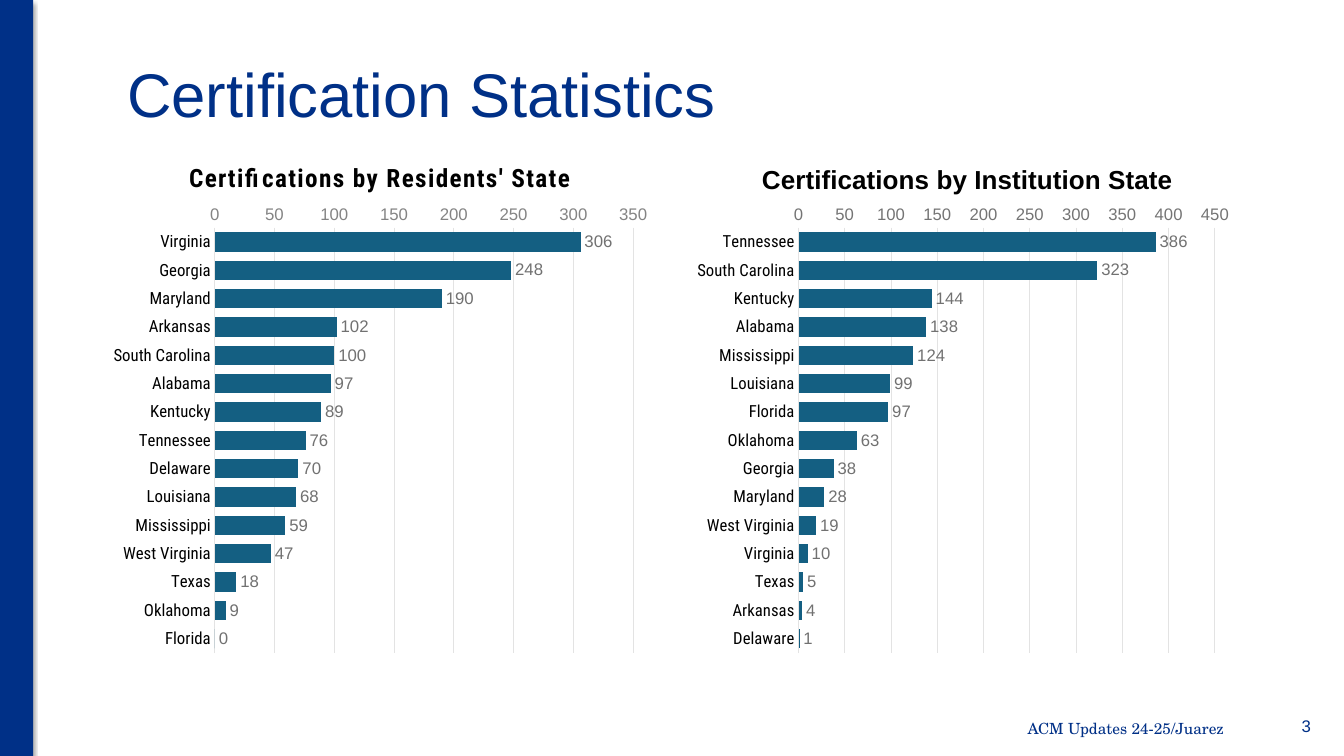
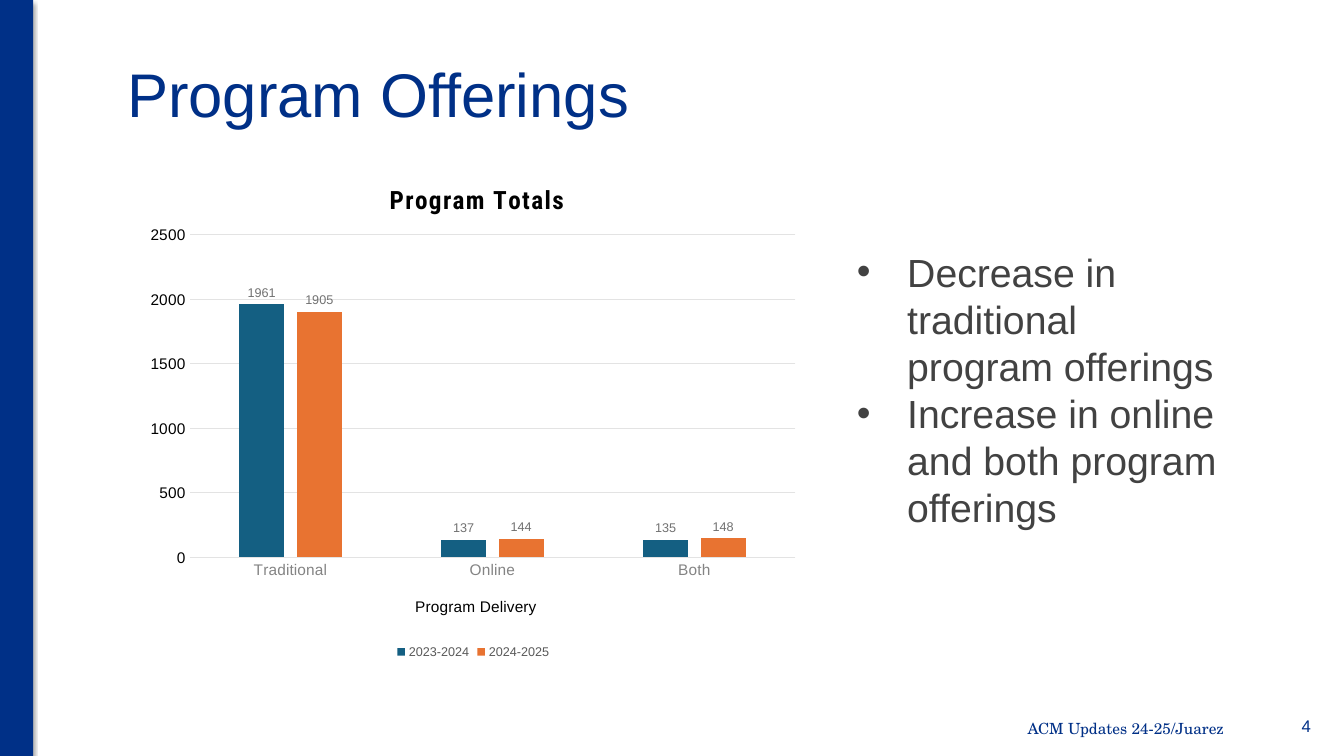
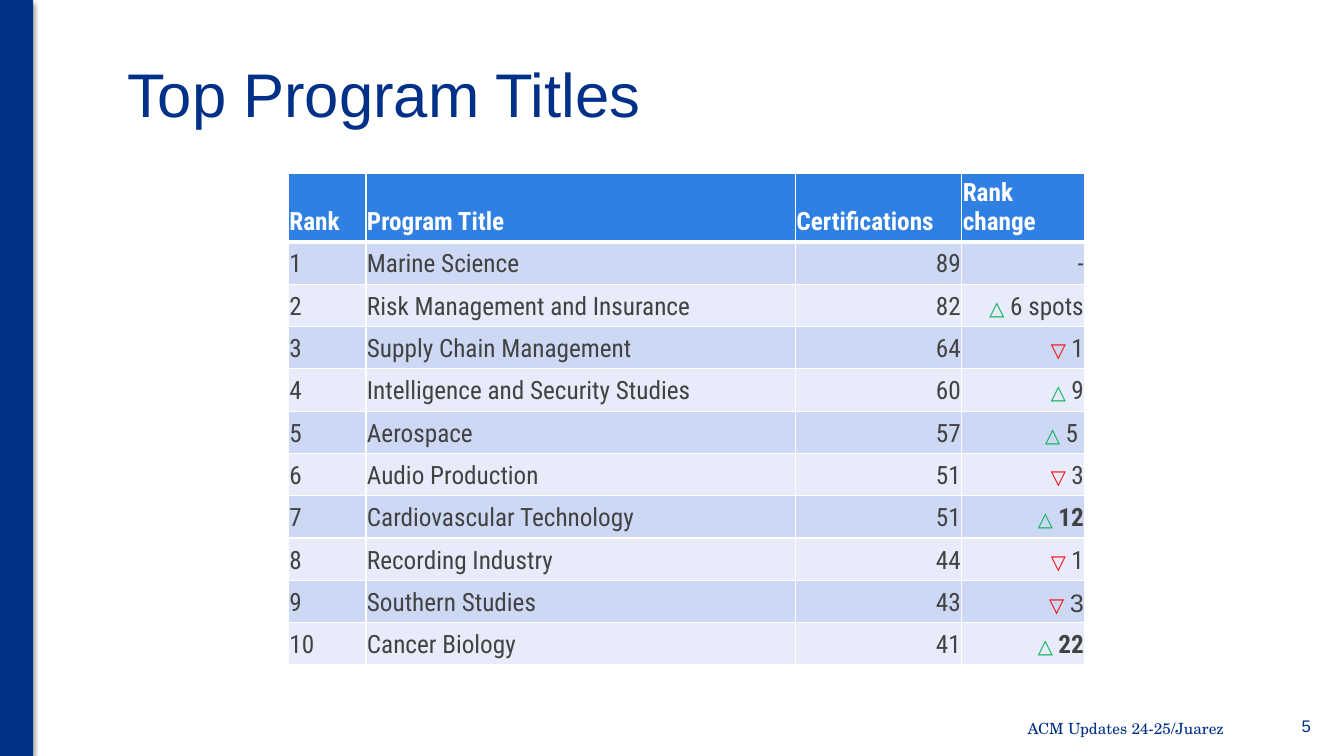
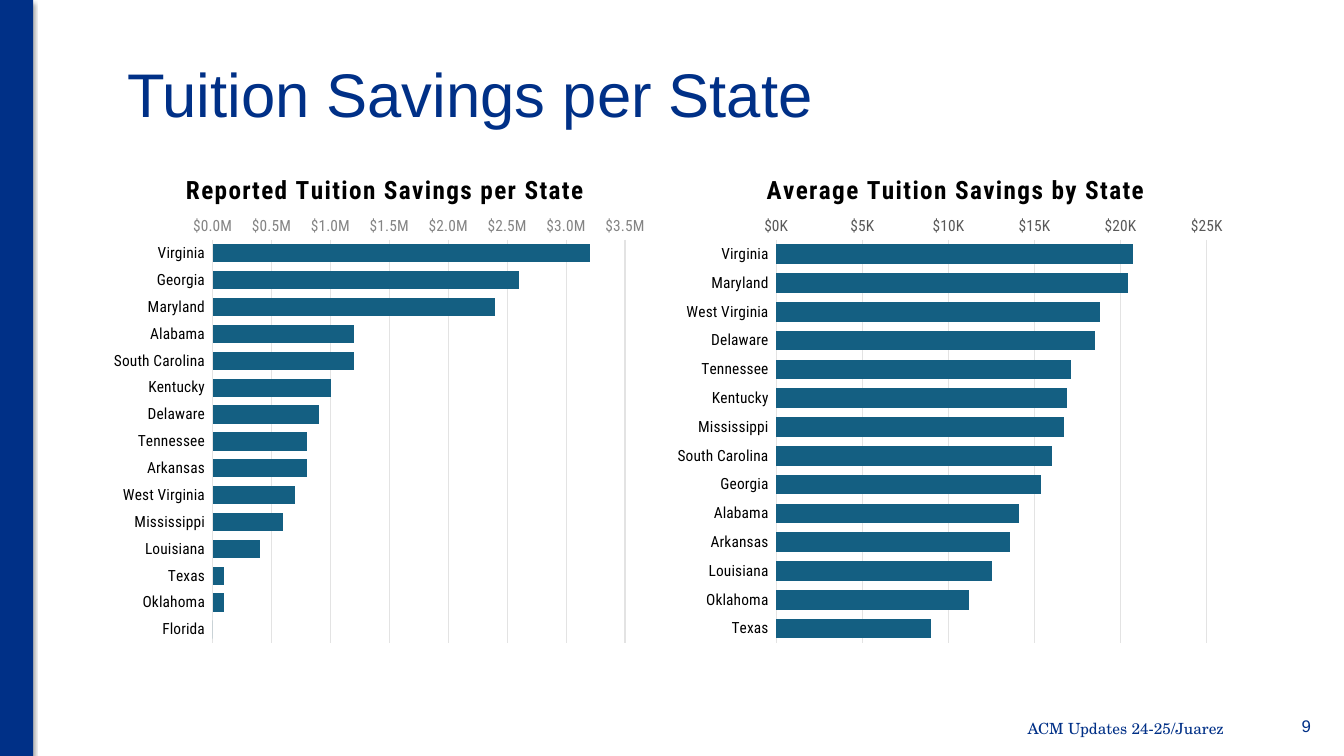
from lxml.etree import SubElement
from pptx import Presentation
from pptx.chart.data import CategoryChartData
from pptx.dml.color import RGBColor
from pptx.enum.chart import XL_CHART_TYPE, XL_LABEL_POSITION, XL_LEGEND_POSITION, XL_TICK_MARK
from pptx.enum.shapes import MSO_SHAPE
from pptx.enum.text import MSO_ANCHOR, PP_ALIGN
from pptx.oxml import parse_xml
from pptx.oxml.ns import nsdecls, qn
from pptx.util import Inches, Pt

NAVY = RGBColor(0x00, 0x30, 0x87)
BLUE = RGBColor(0x30, 0x7F, 0xE2)
TEAL = RGBColor(0x14, 0x5F, 0x82)
ORANGE = RGBColor(0xE8, 0x73, 0x31)
GREEN = RGBColor(0x00, 0xB0, 0x50)
RED = RGBColor(0xFF, 0x00, 0x00)
BLACK = RGBColor(0x00, 0x00, 0x00)
WHITE = RGBColor(0xFF, 0xFF, 0xFF)
BODY_GREY = RGBColor(0x42, 0x42, 0x42)
LEGEND_GREY = RGBColor(0x59, 0x59, 0x59)
LABEL_GREY = RGBColor(0x71, 0x71, 0x71)
SCALE_GREY = RGBColor(0x74, 0x74, 0x74)
AXIS_GREY = RGBColor(0x84, 0x84, 0x84)
GRID_GREY = RGBColor(0xE3, 0xE3, 0xE3)
ROW_FILLS = (RGBColor(0xCD, 0xD8, 0xF4), RGBColor(0xE8, 0xEC, 0xFA))

ARIAL = "Arial"
CONDENSED = "Roboto Condensed"
SERIF = "TeX Gyre Schola"
NBSP = chr(160)
FOOTER = "ACM Updates 24-25/Juarez"

RESIDENTS = {
    "Virginia": 306, "Georgia": 248, "Maryland": 190, "Arkansas": 102,
    "South Carolina": 100, "Alabama": 97, "Kentucky": 89, "Tennessee": 76,
    "Delaware": 70, "Louisiana": 68, "Mississippi": 59, "West Virginia": 47,
    "Texas": 18, "Oklahoma": 9, "Florida": 0,
}
INSTITUTIONS = {
    "Tennessee": 386, "South Carolina": 323, "Kentucky": 144, "Alabama": 138,
    "Mississippi": 124, "Louisiana": 99, "Florida": 97, "Oklahoma": 63,
    "Georgia": 38, "Maryland": 28, "West Virginia": 19, "Virginia": 10,
    "Texas": 5, "Arkansas": 4, "Delaware": 1,
}
REPORTED_SAVINGS = {
    "Virginia": 3200000, "Georgia": 2600000, "Maryland": 2400000,
    "Alabama": 1200000, "South Carolina": 1200000, "Kentucky": 1000000,
    "Delaware": 900000, "Tennessee": 800000, "Arkansas": 800000,
    "West Virginia": 700000, "Mississippi": 600000, "Louisiana": 400000,
    "Texas": 100000, "Oklahoma": 100000, "Florida": 0,
}
AVERAGE_SAVINGS = {
    "Virginia": 20700, "Maryland": 20400, "West Virginia": 18800,
    "Delaware": 18500, "Tennessee": 17100, "Kentucky": 16900,
    "Mississippi": 16700, "South Carolina": 16000, "Georgia": 15400,
    "Alabama": 14100, "Arkansas": 13600, "Louisiana": 12500,
    "Oklahoma": 11200, "Texas": 9000,
}
DELIVERIES = ["Traditional", "Online", "Both"]
PROGRAM_TOTALS = {"2023-2024": [1961, 137, 135], "2024-2025": [1905, 144, 148]}
OFFERING_NOTES = [
    "Decrease in traditional program offerings",
    "Increase in online and both program offerings",
]

PROGRAM_HEADER = ["Rank", "Program Title", "Certifications", "Rank change"]
PROGRAM_WIDTHS = [0.77, 4.26, 1.65, 1.22]
# title, certifications, direction, change, format of the change
PROGRAMS = [
    ("Marine Science", 89, "", "-", {}),
    ("Risk Management and Insurance", 82, "△", "6 spots", {}),
    ("Supply Chain Management", 64, "▽", "1", {}),
    ("Intelligence and Security Studies", 60, "△", "9", {}),
    ("Aerospace", 57, "△", "5 ", {}),
    ("Audio Production", 51, "▽", "3", {}),
    ("Cardiovascular Technology", 51, "△", "12", {"bold": True}),
    ("Recording Industry", 44, "▽", "1", {}),
    ("Southern Studies", 43, "▽", "3", {"font": ARIAL}),
    ("Cancer Biology", 41, "△", "22", {"bold": True}),
]
DIRECTION_COLORS = {"△": GREEN, "▽": RED}


def set_font(font, size, color, name=ARIAL, bold=False):
    font.size, font.name, font.bold = Pt(size), name, bold
    font.color.rgb = color


def write(paragraph, text, size=18, color=BODY_GREY, font=ARIAL, bold=False,
          align=None, spacing=0):
    """Add a run to a paragraph; spacing is the tracking in points."""
    run = paragraph.add_run()
    run.text = text
    set_font(run.font, size, color, font, bold)
    if align is not None:
        paragraph.alignment = align
    if spacing:
        run._r.get_or_add_rPr().set("spc", str(int(spacing * 100)))


def add_text_frame(slide, box, anchor=MSO_ANCHOR.TOP):
    frame = slide.shapes.add_textbox(*map(Inches, box)).text_frame
    frame.word_wrap = True
    frame.vertical_anchor = anchor
    return frame


def add_band(slide):
    band = slide.shapes.add_shape(MSO_SHAPE.RECTANGLE, 0, 0, Inches(0.33), Inches(7.5))
    band.fill.solid()
    band.fill.fore_color.rgb = NAVY
    band.line.fill.background()
    band._element.spPr.append(parse_xml(
        f'<a:effectLst {nsdecls("a")}><a:outerShdw blurRad="{Pt(3.1)}" dist="{Pt(1.8)}" '
        'dir="5400000" rotWithShape="0"><a:srgbClr val="000000"><a:alpha val="35000"/>'
        '</a:srgbClr></a:outerShdw></a:effectLst>'))


def add_slide(prs, title, number):
    """Add a slide with the shared band, title, footer and number."""
    slide = prs.slides.add_slide(prs.slide_layouts[5])
    add_band(slide)
    heading = slide.shapes.title
    heading.left, heading.top, heading.width, heading.height = map(
        Inches, (1.16, 0.3, 11.29, 1.25))
    heading.text_frame.vertical_anchor = MSO_ANCHOR.MIDDLE
    write(heading.text_frame.paragraphs[0], title, size=44, color=NAVY, align=PP_ALIGN.LEFT)
    for text, box, size, font in (
        (FOOTER, (7.65, 7, 4.59, 0.45), 11, SERIF),
        (str(number), (12.27, 6.98, 0.83, 0.45), 12, ARIAL),
    ):
        frame = add_text_frame(slide, box, MSO_ANCHOR.MIDDLE)
        write(frame.paragraphs[0], text, size=size, color=NAVY, font=font,
              align=PP_ALIGN.RIGHT)
    return slide


def place(part, index, chart_box, part_box):
    """Fix a chart part at a slide position in inches, with its size if given."""
    for layout in part.findall(qn("c:layout")):
        part.remove(layout)
    left, top, width, height = chart_box
    fractions = [(part_box[0] - left) / width, (part_box[1] - top) / height]
    settings = [("xMode", "edge"), ("yMode", "edge")]
    if len(part_box) == 4:
        settings.insert(0, ("layoutTarget", "inner"))
        fractions += [part_box[2] / width, part_box[3] / height]
    settings += zip("xywh", (f"{fraction:.4f}" for fraction in fractions))
    layout = parse_xml(f'<c:layout {nsdecls("c")}><c:manualLayout/></c:layout>')
    for name, value in settings:
        SubElement(layout[0], qn(f"c:{name}")).set("val", value)
    part.insert(index, layout)


def add_bar_chart(slide, kind, box, plot_box, title, title_at, categories, series, top_value,
                  step, category_font, value_font, gap, label_size=None, number_format="General"):
    data = CategoryChartData()
    data.categories = categories
    for name, values in series.items():
        data.add_series(name, values)
    chart = slide.shapes.add_chart(kind, *map(Inches, box), data).chart
    set_font(chart.font, 10, BODY_GREY)
    chart.has_legend = False
    write(chart.chart_title.text_frame.paragraphs[0], title, color=BLACK,
          font=CONDENSED, bold=True, spacing=1)
    place(chart.chart_title._element, 1, box, title_at)
    place(chart._chartSpace.chart.plotArea, 0, box, plot_box)

    category_axis, value_axis = chart.category_axis, chart.value_axis
    for axis, font in ((category_axis, category_font), (value_axis, value_font)):
        axis.major_tick_mark = axis.minor_tick_mark = XL_TICK_MARK.NONE
        set_font(axis.tick_labels.font, *font)
    value_axis.minimum_scale, value_axis.maximum_scale = 0, top_value
    value_axis.major_unit = step
    value_axis.tick_labels.number_format = number_format
    value_axis.tick_labels.number_format_is_linked = False
    value_axis.format.line.fill.background()
    for line in (category_axis.format.line, value_axis.major_gridlines.format.line):
        line.color.rgb = GRID_GREY
        line.width = Pt(0.75)

    plot = chart.plots[0]
    plot.gap_width = gap
    plot.vary_by_categories = False
    for bars, color in zip(plot.series, (TEAL, ORANGE)):
        bars.format.fill.solid()
        bars.format.fill.fore_color.rgb = color
        if label_size:
            labels = bars.data_labels
            labels.show_value = True
            labels.position = XL_LABEL_POSITION.OUTSIDE_END
            set_font(labels.font, label_size, LABEL_GREY)
    return chart


def add_state_chart(slide, title, values, label_gap="", **options):
    """Add horizontal bars, one for each state, from the top down."""
    chart = add_bar_chart(
        slide, XL_CHART_TYPE.BAR_CLUSTERED, title=title, gap=47,
        categories=[state + label_gap for state in values],
        series={"Series 1": list(values.values())}, **options)
    chart.category_axis.reverse_order = True
    return chart


def add_certifications(prs):
    slide = add_slide(prs, "Certification Statistics", 3)
    add_state_chart(
        slide, "Certifications by Residents' State", RESIDENTS, box=(1.02, 1.33, 5.51, 5.25),
        plot_box=(2.13, 2.26, 4.15, 4.22), title_at=(1.83, 1.56), top_value=350, step=50,
        category_font=(12, BLACK, CONDENSED), value_font=(12, AXIS_GREY), label_size=12)
    chart = add_state_chart(
        slide, "Certifications by Institution State", INSTITUTIONS, box=(6.81, 1.33, 5.49, 5.25),
        plot_box=(7.92, 2.26, 4.13, 4.22), title_at=(7.51, 1.56), top_value=450, step=50,
        category_font=(11.9, BLACK, CONDENSED), value_font=(11.9, SCALE_GREY), label_size=11.9)
    title_run = chart.chart_title.text_frame.paragraphs[0].runs[0]
    set_font(title_run.font, 18.6, BLACK, ARIAL, True)
    title_run._r.get_or_add_rPr().set("spc", "0")


def add_offerings(prs):
    slide = add_slide(prs, "Program Offerings", 4)
    box = (1.36, 1.55, 6.67, 5.03)
    chart = add_bar_chart(
        slide, XL_CHART_TYPE.COLUMN_CLUSTERED, box, (1.88, 2.33, 6.01, 3.2),
        "Program Totals", (3.82, 1.77), DELIVERIES, PROGRAM_TOTALS, top_value=2500, step=500,
        category_font=(11, AXIS_GREY), value_font=(11, BLACK), gap=219, label_size=9)
    chart.plots[0].overlap = -27
    delivery_title = chart.category_axis.axis_title
    write(delivery_title.text_frame.paragraphs[0], "Program Delivery", size=11, color=BLACK)
    place(delivery_title._element, 1, box, (4.09, 5.89))
    chart.has_legend = True
    chart.legend.position = XL_LEGEND_POSITION.BOTTOM
    chart.legend.include_in_layout = False
    set_font(chart.legend.font, 9, LEGEND_GREY)

    frame = add_text_frame(slide, (8.4, 2.41, 3.87, 2.93))
    for index, note in enumerate(OFFERING_NOTES):
        paragraph = frame.add_paragraph() if index else frame.paragraphs[0]
        properties = paragraph._p.get_or_add_pPr()
        properties.set("marL", str(Inches(0.5)))
        properties.set("indent", str(-Inches(0.5)))
        SubElement(properties, qn("a:buFont")).set("typeface", ARIAL)
        SubElement(properties, qn("a:buChar")).set("char", "•")
        write(paragraph, note, size=28)


def format_cell(cell, fill, bottom_width=1):
    cell.margin_left = cell.margin_right = cell.margin_top = Inches(0.01)
    cell.margin_bottom = Inches(0.05)
    cell.vertical_anchor = MSO_ANCHOR.BOTTOM
    properties = cell._tc.get_or_add_tcPr()
    for side, width in (("L", 1), ("R", 1), ("T", 1), ("B", bottom_width)):
        properties.append(parse_xml(
            f'<a:ln{side} {nsdecls("a")} w="{Pt(width)}"><a:solidFill>'
            f'<a:srgbClr val="{WHITE}"/></a:solidFill></a:ln{side}>'))
    cell.fill.solid()
    cell.fill.fore_color.rgb = fill


def add_programs(prs):
    slide = add_slide(prs, "Top Program Titles", 5)
    table = slide.shapes.add_table(
        len(PROGRAMS) + 1, len(PROGRAM_HEADER),
        *map(Inches, (2.86, 1.72, sum(PROGRAM_WIDTHS), 4.84))).table
    for column, width in zip(table.columns, PROGRAM_WIDTHS):
        column.width = Inches(width)
    for index, row in enumerate(table.rows):
        row.height = Inches(0.42 if index else 0.68)

    for column, heading in enumerate(PROGRAM_HEADER):
        cell = table.cell(0, column)
        format_cell(cell, BLUE, bottom_width=3)
        write(cell.text_frame.paragraphs[0], heading, color=WHITE, font=CONDENSED, bold=True)
    for rank, (program, count, direction, change, change_format) in enumerate(PROGRAMS, 1):
        for column, text in enumerate((str(rank), program, str(count), change)):
            cell = table.cell(rank, column)
            format_cell(cell, ROW_FILLS[(rank - 1) % 2])
            paragraph = cell.text_frame.paragraphs[0]
            style = {"font": CONDENSED}
            if column == 3:
                style.update(change_format)
                if direction:
                    write(paragraph, direction + NBSP, size=14,
                          color=DIRECTION_COLORS[direction], bold=True)
            write(paragraph, text, align=PP_ALIGN.RIGHT if column > 1 else PP_ALIGN.LEFT, **style)


def add_savings(prs):
    slide = add_slide(prs, "Tuition Savings per State", 9)
    shared = {"category_font": (11, BLACK, CONDENSED), "label_gap": NBSP}
    add_state_chart(
        slide, "Reported Tuition Savings per State", REPORTED_SAVINGS,
        box=(1.03, 1.45, 5.48, 5.03), plot_box=(2.11, 2.38, 4.09, 4), title_at=(1.8, 1.67),
        top_value=3500000, step=500000, value_font=(11, AXIS_GREY, CONDENSED),
        number_format='"$"0.0,,"M"', **shared)
    add_state_chart(
        slide, "Average Tuition Savings by State", AVERAGE_SAVINGS,
        box=(6.61, 1.45, 5.63, 5.03), plot_box=(7.7, 2.38, 4.27, 4), title_at=(7.56, 1.67),
        top_value=25000, step=5000, value_font=(11, LEGEND_GREY, CONDENSED),
        number_format='"$"0,"K"', **shared)


def main():
    prs = Presentation()
    prs.slide_width, prs.slide_height = Inches(13.33), Inches(7.5)
    add_certifications(prs)
    add_offerings(prs)
    add_programs(prs)
    add_savings(prs)
    prs.save("out.pptx")


if __name__ == "__main__":
    main()
